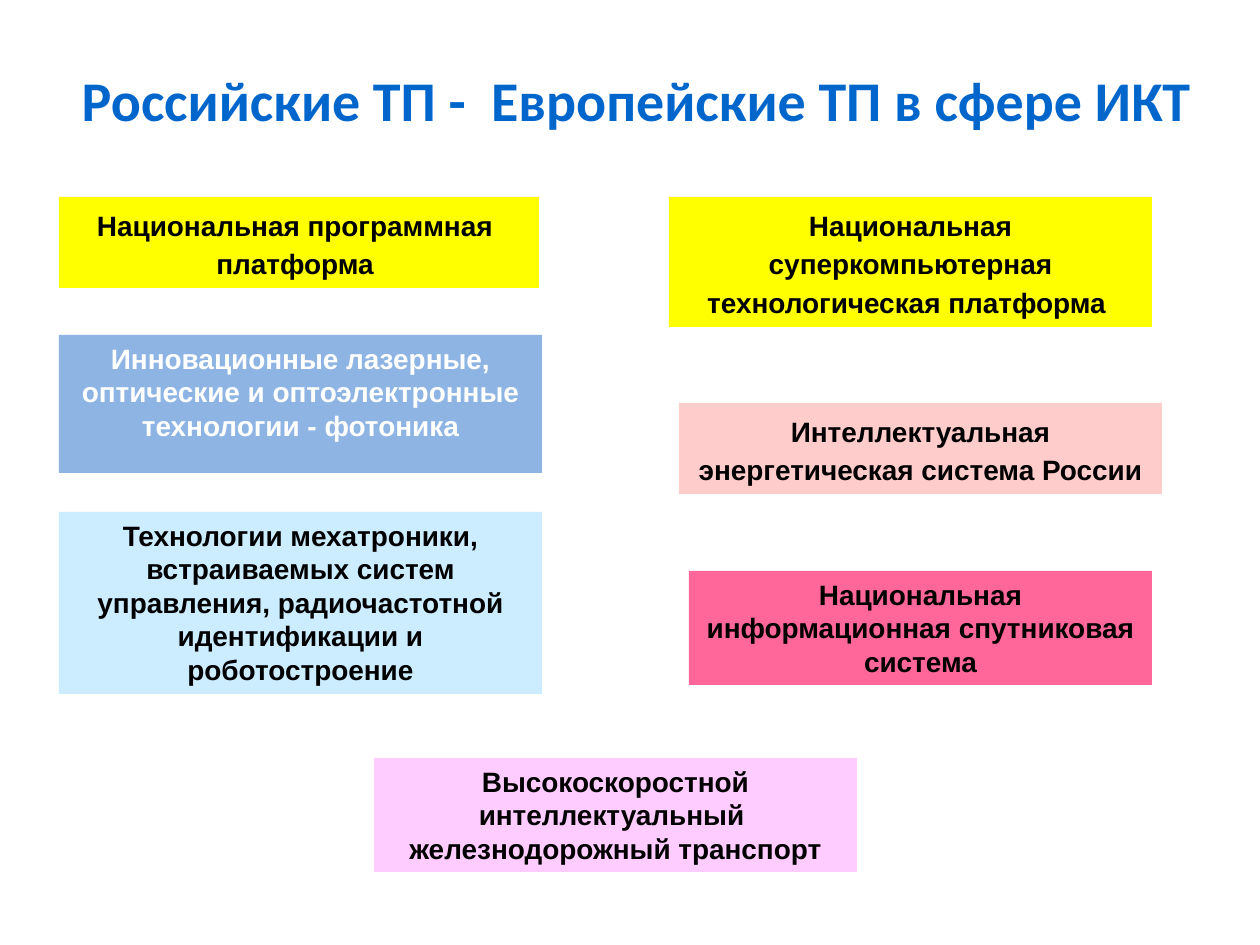
from dataclasses import dataclass

from pptx import Presentation
from pptx import util as u
from pptx.dml.color import RGBColor
from pptx.enum import shapes, text

PX_PER_INCH = 126

BLUE = RGBColor(0x00, 0x66, 0xCC)
BLACK = RGBColor(0x00, 0x00, 0x00)
WHITE = RGBColor(0xFF, 0xFF, 0xFF)
YELLOW = RGBColor(0xFF, 0xFF, 0x00)
ROSE = RGBColor(0xFF, 0xCC, 0xCC)
STEEL = RGBColor(0x8E, 0xB4, 0xE3)
PINK = RGBColor(0xFF, 0x66, 0x99)
SKY = RGBColor(0xCC, 0xEC, 0xFF)
LILAC = RGBColor(0xFF, 0xCC, 0xFF)

LEFT_COLUMN = 59
BOX_WIDTH = 483
LOOSE = 1.15


@dataclass(frozen=True)
class Platform:
    lines: tuple[str, ...]
    left: int
    top: int
    height: int
    fill: RGBColor
    width: int = BOX_WIDTH
    color: RGBColor = BLACK
    spacing: float = 1.0


PLATFORMS = (
    Platform(("Национальная программная ", "платформа "),
             LEFT_COLUMN, 197, 91, YELLOW, width=480, spacing=LOOSE),
    Platform(("Национальная суперкомпьютерная технологическая платформа ",),
             669, 197, 130, YELLOW, spacing=LOOSE),
    Platform(("Интеллектуальная энергетическая система России",),
             679, 403, 91, ROSE, spacing=LOOSE),
    Platform(("Инновационные лазерные, оптические и оптоэлектронные "
              "технологии - фотоника",),
             LEFT_COLUMN, 335, 138, STEEL, color=WHITE),
    Platform(("Национальная информационная спутниковая система",),
             689, 571, 114, PINK, width=463),
    Platform(("Технологии мехатроники, встраиваемых систем управления, "
              "радиочастотной идентификации и роботостроение",),
             LEFT_COLUMN, 512, 182, SKY),
    Platform(("Высокоскоростной интеллектуальный ",
              "железнодорожный транспорт"),
             374, 758, 114, LILAC),
)


def px(value: int) -> int:
    return round(value * u.Inches(1) / PX_PER_INCH)


def apply(target, values: dict) -> None:
    for name, value in values.items():
        setattr(target, name, value)


def write_text(shape, lines: tuple[str, ...], color: RGBColor,
               font_format: dict, paragraph_format: dict) -> None:
    frame = shape.text_frame
    apply(frame, {
        "word_wrap": True,
        "auto_size": text.MSO_AUTO_SIZE.NONE,
        "vertical_anchor": text.MSO_ANCHOR.TOP,
    })
    frame.text = "\n".join(lines)
    for paragraph in frame.paragraphs:
        apply(paragraph, paragraph_format)
        for run in paragraph.runs:
            apply(run.font, font_format)
            run.font.color.rgb = color


def add_title(slide) -> None:
    title = slide.shapes.title
    apply(title, {"left": px(69), "top": px(59),
                  "width": px(1162), "height": px(81)})
    write_text(title, ("Российские ТП -  Европейские ТП в сфере ИКТ",), BLUE,
               {"name": "Calibri", "size": u.Pt(32), "bold": True},
               {"alignment": text.PP_ALIGN.LEFT, "line_spacing": 1.0,
                "space_before": u.Pt(0)})


def add_platform(slide, platform: Platform) -> None:
    shape = slide.shapes.add_shape(
        shapes.MSO_SHAPE.RECTANGLE, px(platform.left), px(platform.top),
        px(platform.width), px(platform.height))
    shape.shadow.inherit = False
    shape.fill.solid()
    shape.fill.fore_color.rgb = platform.fill
    shape.line.fill.background()
    write_text(shape, platform.lines, platform.color,
               {"name": "Arial", "size": u.Pt(16), "bold": True},
               {"alignment": text.PP_ALIGN.CENTER,
                "line_spacing": platform.spacing})


def main() -> None:
    presentation = Presentation()
    apply(presentation, {"slide_width": px(1260), "slide_height": px(945)})
    slide = presentation.slides.add_slide(presentation.slide_layouts[5])
    add_title(slide)
    for platform in PLATFORMS:
        add_platform(slide, platform)
    presentation.save("out.pptx")


if __name__ == "__main__":
    main()
